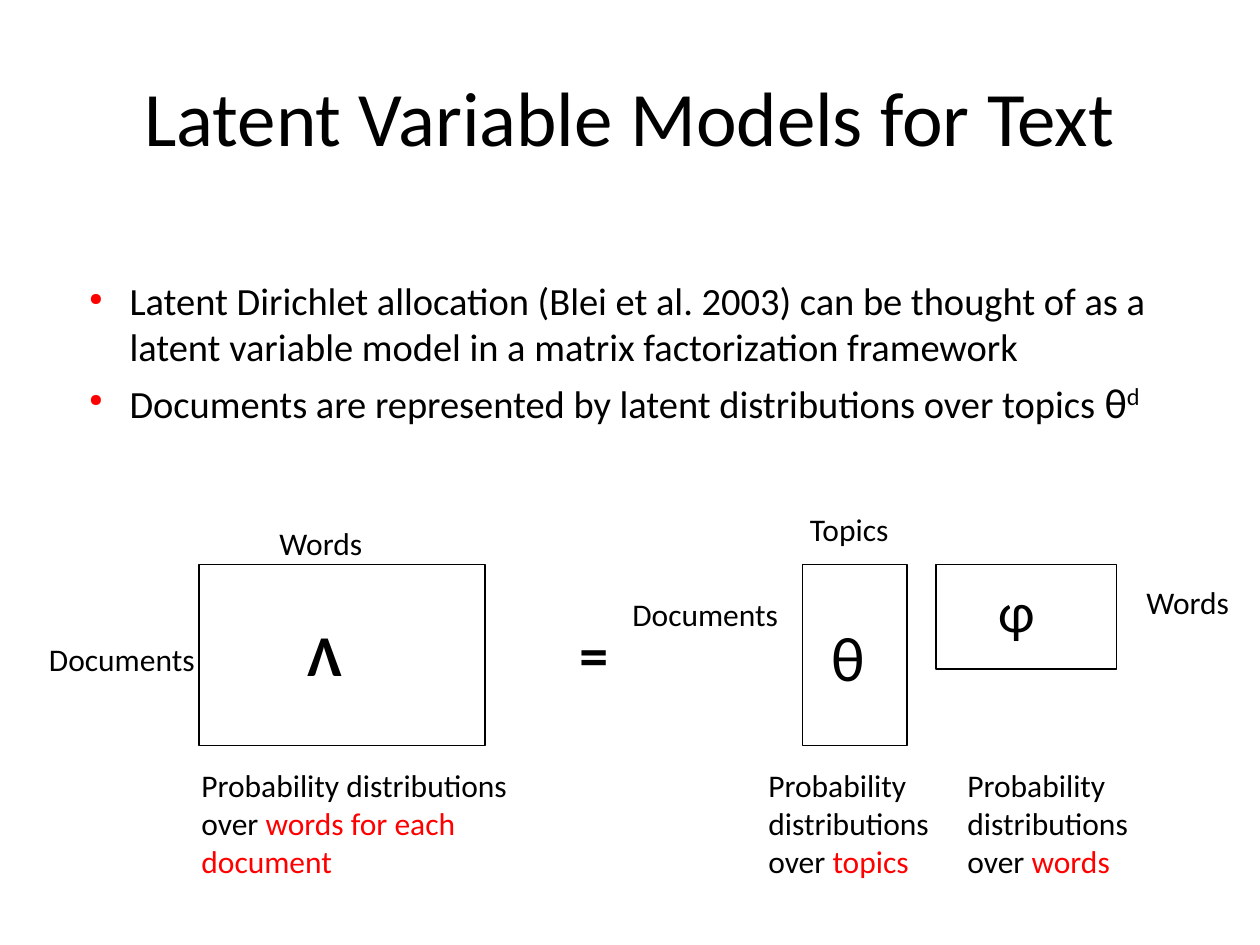
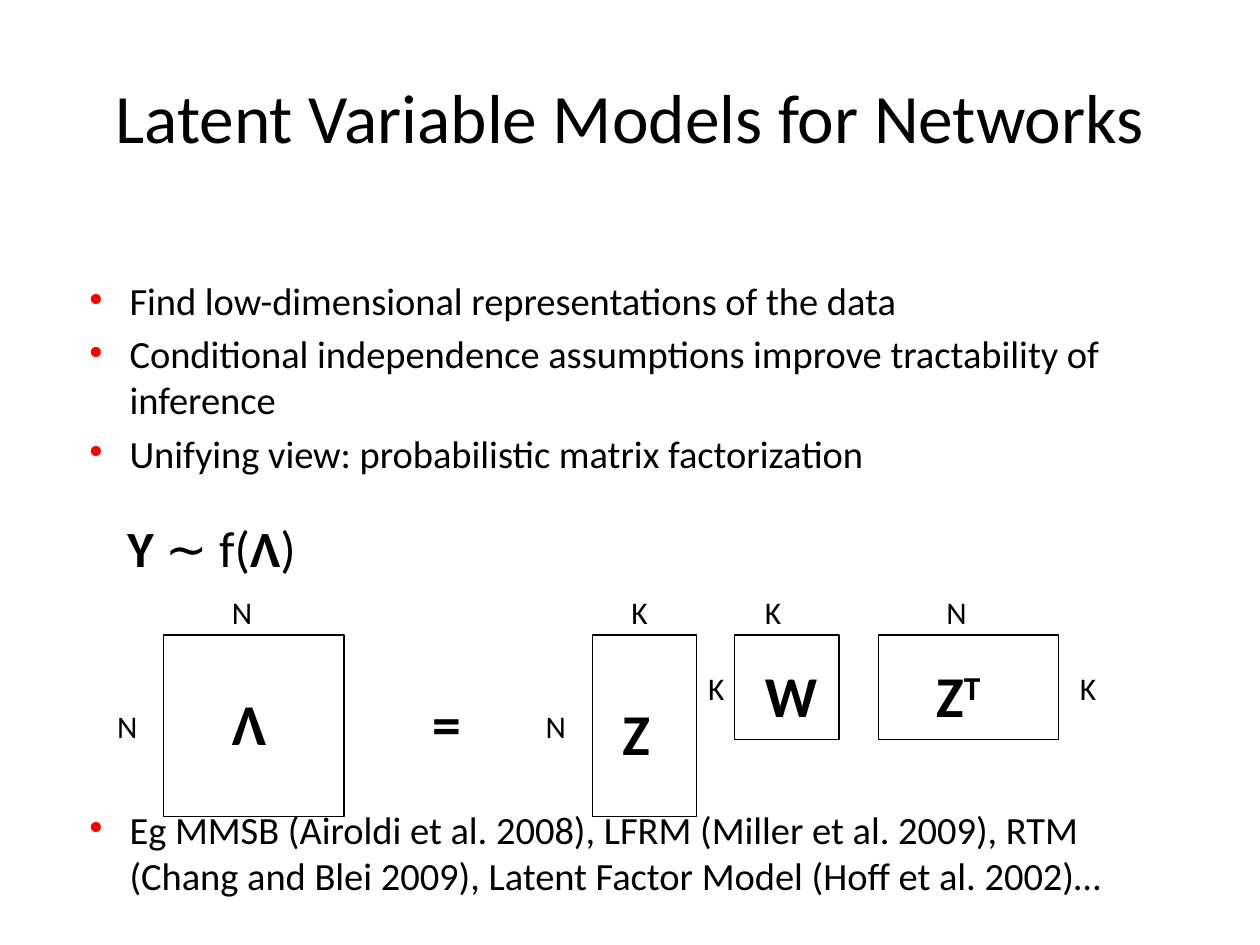
"""Builds two slides that present latent variable models as matrix factorizations."""
import dataclasses
import typing

import pptx
import pptx.dml.color
import pptx.enum.shapes
import pptx.enum.text
import pptx.oxml
import pptx.oxml.ns
import pptx.util

EMU_PER_PX = 9144
COLORS = {"ink": "000000", "accent": "FF0000", "paper": "FFFFFF"}
FONT = "Calibri"
TITLE_BOX = (50, 34, 900, 116)
BODY_BOX = (50, 215, 900, 524)
BODY_SIZE = 22
BULLET_GAP = 4
BULLET_XML = (
    ("buClr", f'<a:srgbClr val="{COLORS["accent"]}"/>', ""),
    ("buSzPct", "", 'val="45000"'),
    ("buChar", "", 'char="●"'),
)
SYMBOL_SIZE = 33
SYMBOL_WIDTH = 68


@dataclasses.dataclass(frozen=True)
class Span:
    """A stretch of text in one format."""
    text: str
    size: float = 18
    bold: bool = False
    color: str = "ink"
    raised: bool = False


@dataclasses.dataclass(frozen=True)
class Bullet:
    """A bulleted paragraph and the points above it."""
    spans: tuple[Span, ...]
    gap: float = BULLET_GAP


@dataclasses.dataclass(frozen=True)
class Matrix:
    """A matrix outline in px."""
    left: int
    top: int
    width: int
    height: int


@dataclasses.dataclass(frozen=True)
class Label:
    """A text label in px."""
    left: int
    top: int
    width: int
    height: int
    spans: tuple[Span, ...]


@dataclasses.dataclass(frozen=True)
class Topic:
    """Everything that one slide shows."""
    title: Span
    bullets: tuple[Bullet, ...]
    matrices: tuple[Matrix, ...]
    labels: tuple[Label, ...]
    label_inset: int


def px(length: int) -> pptx.util.Emu:
    """Turn px into EMU."""
    return pptx.util.Emu(length * EMU_PER_PX)


def rgb(name: str) -> pptx.dml.color.RGBColor:
    """Look up a named colour."""
    return pptx.dml.color.RGBColor.from_string(COLORS[name])


def apply(target: typing.Any, values: dict[str, typing.Any]) -> None:
    """Set each format value on the target."""
    for key, value in values.items():
        setattr(target, key, value)


def symbol(left: int, top: int, text: str, size: int = SYMBOL_SIZE,
           bold: bool = True, exponent: str = "") -> Label:
    """Describe a large matrix symbol."""
    spans = [Span(text, size, bold)]
    if exponent:
        spans.append(Span(exponent, size, bold, raised=True))
    return Label(left, top, SYMBOL_WIDTH, 2 * size, tuple(spans))


def dimension(left: int, top: int, text: str, width: int = 45) -> Label:
    """Describe the name of a matrix dimension."""
    return Label(left, top, width, 40, (Span(text),))


def caption(left: int, width: int, subject: str) -> Label:
    """Describe the explanation below a matrix."""
    spans = (Span("Probability distributions over "), Span(subject, color="accent"))
    return Label(left, 603, width, 101, spans)


def bullet(text: str, *extra: Span, gap: float = BULLET_GAP) -> Bullet:
    """Describe a bullet in the body size."""
    return Bullet((Span(text, BODY_SIZE), *extra), gap)


def write_spans(paragraph: typing.Any, spans: tuple[Span, ...]) -> None:
    """Write the spans as runs of a paragraph."""
    for span in spans:
        run = paragraph.add_run()
        run.text = span.text
        apply(run.font, {"name": FONT, "size": pptx.util.Pt(span.size), "bold": span.bold})
        run.font.color.rgb = rgb(span.color)
        if span.raised:
            run.font._element.set("baseline", "30000")


def add_frame(slide: typing.Any, box: tuple[int, int, int, int],
              **values: typing.Any) -> typing.Any:
    """Add a wrapping text box and return its frame."""
    frame = slide.shapes.add_textbox(*map(px, box)).text_frame
    apply(frame, {"word_wrap": True, **values})
    return frame


def draw_title(slide: typing.Any, title: Span) -> None:
    """Draw the centred title."""
    frame = add_frame(slide, TITLE_BOX, margin_top=px(4),
                      vertical_anchor=pptx.enum.text.MSO_ANCHOR.MIDDLE)
    frame.paragraphs[0].alignment = pptx.enum.text.PP_ALIGN.CENTER
    write_spans(frame.paragraphs[0], (title,))


def draw_bullets(slide: typing.Any, bullets: tuple[Bullet, ...]) -> None:
    """Draw the body with red bullets."""
    frame = add_frame(slide, BODY_BOX)
    for index, item in enumerate(bullets):
        paragraph = frame.add_paragraph() if index else frame.paragraphs[0]
        paragraph.space_before = pptx.util.Pt(item.gap)
        properties = paragraph._p.get_or_add_pPr()
        properties.set("marL", str(px(43)))
        properties.set("indent", str(px(-32)))
        for tag, content, attributes in BULLET_XML:
            properties.append(pptx.oxml.parse_xml(
                f'<a:{tag} {pptx.oxml.ns.nsdecls("a")} {attributes}>{content}</a:{tag}>'))
        write_spans(paragraph, item.spans)


def draw_matrix(slide: typing.Any, matrix: Matrix) -> None:
    """Draw a matrix as an outlined rectangle."""
    outline = slide.shapes.add_shape(pptx.enum.shapes.MSO_SHAPE.RECTANGLE,
                                     *map(px, dataclasses.astuple(matrix)))
    outline.shadow.inherit = False
    outline.fill.solid()
    outline.fill.fore_color.rgb = rgb("paper")
    outline.line.color.rgb = rgb("ink")
    outline.line.width = pptx.util.Pt(0.75)


def draw_label(slide: typing.Any, label: Label, inset: int) -> None:
    """Draw a label that grows with its text."""
    frame = add_frame(slide, (label.left, label.top, label.width, label.height),
                      margin_left=px(inset), margin_right=px(inset),
                      auto_size=pptx.enum.text.MSO_AUTO_SIZE.SHAPE_TO_FIT_TEXT)
    write_spans(frame.paragraphs[0], label.spans)


def draw_topic(deck: typing.Any, topic: Topic) -> None:
    """Draw one slide."""
    slide = deck.slides.add_slide(deck.slide_layouts[6])
    draw_title(slide, topic.title)
    draw_bullets(slide, topic.bullets)
    for matrix in topic.matrices:
        draw_matrix(slide, matrix)
    for label in topic.labels:
        draw_label(slide, label, topic.label_inset)


TEXT_MODELS = Topic(
    title=Span("Latent Variable Models for Text", 44),
    bullets=(
        bullet("Latent Dirichlet allocation (Blei et al. 2003) can be thought of as a "
               "latent variable model in a matrix factorization framework"),
        bullet("Documents are represented by latent distributions over topics ",
               Span("θ", 24), Span("d", 24, raised=True)),
    ),
    matrices=(
        Matrix(158, 448, 227, 144),
        Matrix(637, 448, 83, 144),
        Matrix(743, 448, 143, 83),
    ),
    labels=(
        symbol(234, 486, "Λ"),
        symbol(450, 486, "="),
        symbol(650, 486, "θ", 36, False),
        symbol(783, 453, "φ", 32, False),
        dimension(29, 503, "Documents", 155),
        dimension(212, 411, "Words", 100),
        dimension(492, 467, "Documents", 155),
        dimension(633, 400, "Topics", 100),
        dimension(900, 458, "Words", 100),
        caption(150, 275, "words for each document"),
        caption(600, 183, "topics"),
        caption(758, 183, "words"),
    ),
    label_inset=10,
)

NETWORK_MODELS = Topic(
    title=Span("Latent Variable Models for Networks", 39.6),
    bullets=(
        bullet("Find low-dimensional representations of the data"),
        bullet("Conditional independence assumptions improve tractability of inference"),
        bullet("Unifying view: probabilistic matrix factorization"),
        bullet("Eg MMSB (Airoldi et al. 2008), LFRM (Miller et al. 2009), RTM "
               "(Chang and Blei 2009), Latent Factor Model (Hoff et al. 2002)…", gap=188.6),
    ),
    matrices=(
        Matrix(130, 504, 143, 144),
        Matrix(470, 504, 83, 144),
        Matrix(583, 504, 83, 83),
        Matrix(697, 504, 143, 83),
    ),
    labels=(
        Label(92, 405, 181, 58, (Span("Y", 29, True), Span(" ∼ f(", 29),
                                 Span("Λ", 29, True), Span(")", 29))),
        symbol(175, 541, "Λ"),
        symbol(334, 541, "="),
        symbol(485, 549, "Z"),
        symbol(598, 519, "W"),
        symbol(734, 519, "Z", exponent="T"),
        *(dimension(left, 466, name)
          for left, name in ((175, "N"), (492, "K"), (598, "K"), (742, "N"))),
        *(dimension(left, 556, "N") for left in (84, 424)),
        *(dimension(left, 526, "K") for left in (553, 848)),
    ),
    label_inset=9,
)


def main() -> None:
    """Build and save the deck."""
    deck = pptx.Presentation()
    apply(deck, {"slide_width": px(1000), "slide_height": px(750)})
    for topic in (TEXT_MODELS, NETWORK_MODELS):
        draw_topic(deck, topic)
    deck.save("out.pptx")


if __name__ == "__main__":
    main()
